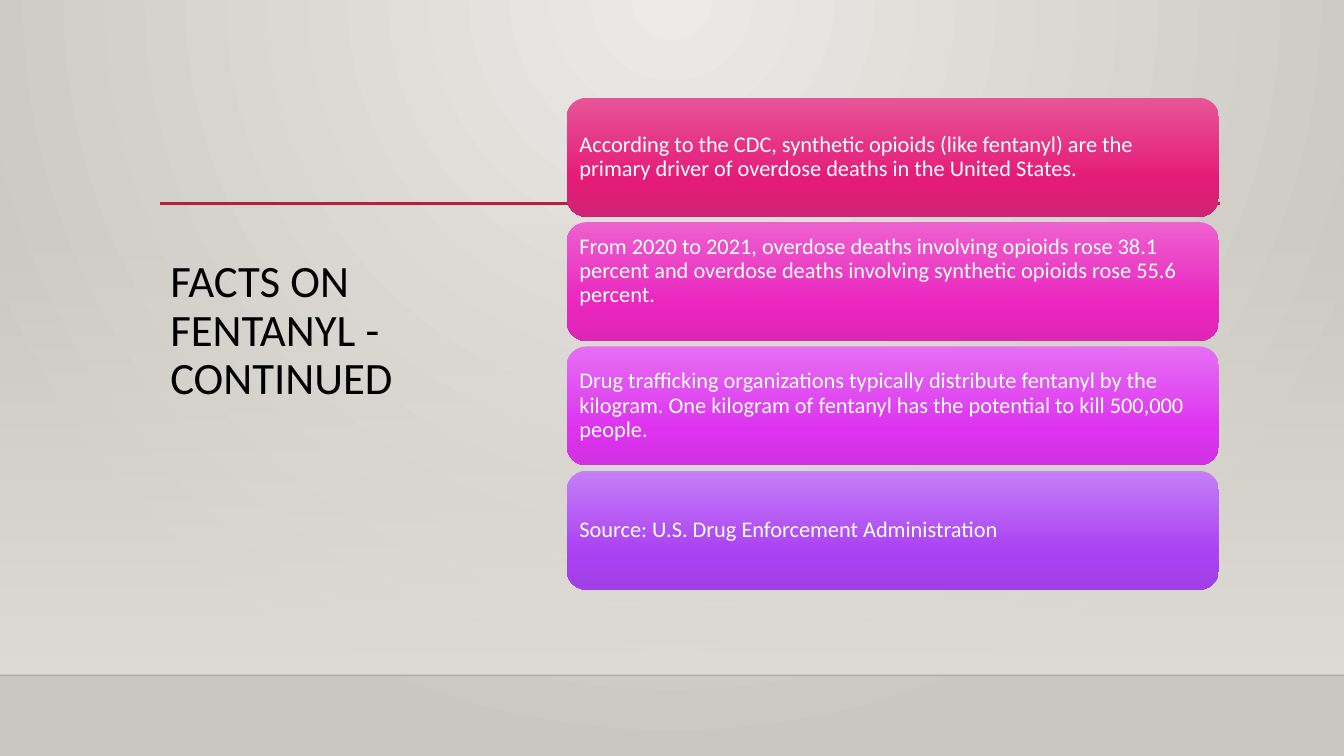
from lxml import etree
from pptx import Presentation
from pptx.dml.color import RGBColor
from pptx.enum import shapes, text
from pptx.oxml.ns import qn
from pptx.util import Inches, Pt

FONT = "Calibri"
COLORS = {"title": "000000", "card_text": "FFFFFF", "accent": "B71E42",
          "floor_line": "000001", "wall": "DFDBD5",
          "back_center": "ECEAE7", "back_edge": "CAC7C1"}

TITLE = "FACTS ON FENTANYL - CONTINUED"
# Text, vertical anchor, gradient colours from top to bottom
CARDS = [
    ("According to the CDC, synthetic opioids (like fentanyl) are the primary "
     "driver of overdose deaths in the United States.",
     "MIDDLE", ("E75597", "E51A79", "CF2374")),
    ("From 2020 to 2021, overdose deaths involving opioids rose 38.1 percent and "
     "overdose deaths involving synthetic opioids rose 55.6 percent.",
     "TOP", ("ED61CE", "EB26C0", "DE25B6")),
    ("Drug trafficking organizations typically distribute fentanyl by the kilogram. "
     "One kilogram of fentanyl has the potential to kill 500,000 people.",
     "MIDDLE", ("E66FF3", "DD33F0", "D131E2")),
    ("Source: U.S. Drug Enforcement Administration",
     "MIDDLE", ("C57FF7", "AA41F3", "A13FE5")),
]
CARD_STOPS = (0, 69, 100)
CARD_LEFT, CARD_WIDTH, CARD_HEIGHT = 5.62, 6.47, 1.18
FIRST_TOP, LAST_TOP = 0.97, 4.67
SLIDE_WIDTH, SLIDE_HEIGHT = 13.33, 7.5
FLOOR_TOP = 6.7


def set_alpha(color_element, percent):
    etree.SubElement(color_element, qn("a:alpha"), val=str(percent * 1000))


def set_gradient(fill, element, stops, circle=None):
    """Stops are (position, colour, opacity); circle is the focus rectangle."""
    fill.gradient()
    gradient = element.find(".//" + qn("a:gradFill"))
    for child in list(gradient):
        gradient.remove(child)
    stop_list = etree.SubElement(gradient, qn("a:gsLst"))
    for position, color, opacity in stops:
        stop = etree.SubElement(stop_list, qn("a:gs"), pos=str(position * 1000))
        color_element = etree.SubElement(stop, qn("a:srgbClr"), val=color)
        if opacity < 100:
            set_alpha(color_element, opacity)
    if circle:
        focus = etree.SubElement(gradient, qn("a:path"), path="circle")
        etree.SubElement(focus, qn("a:fillToRect"),
                         **{side: str(value * 1000) for side, value in circle.items()})
    else:
        etree.SubElement(gradient, qn("a:lin"), ang="5400000", scaled="0")


def add_box(slide, kind, left, top, width, height, stops):
    shape = slide.shapes.add_shape(kind, Inches(left), Inches(top),
                                   Inches(width), Inches(height))
    shape.shadow.inherit = False
    shape.line.fill.background()
    set_gradient(shape.fill, shape.element, stops)
    return shape


def add_line(slide, left, right, top, color, width, opacity=100):
    line = slide.shapes.add_connector(shapes.MSO_CONNECTOR.STRAIGHT, Inches(left),
                                      Inches(top), Inches(right), Inches(top))
    line.line.color.rgb = RGBColor.from_string(color)
    line.line.width = Pt(width)
    properties = line.element.spPr
    if opacity < 100:
        set_alpha(properties.find(".//" + qn("a:srgbClr")), opacity)
    etree.SubElement(properties, qn("a:effectLst"))


def write(shape, words, size, color, anchor="TOP", margins=(0.1, 0.05)):
    frame = shape.text_frame
    frame.word_wrap = True
    frame.vertical_anchor = text.MSO_ANCHOR[anchor]
    frame.margin_left = frame.margin_right = Inches(margins[0])
    frame.margin_top = frame.margin_bottom = Inches(margins[1])
    paragraph = frame.paragraphs[0]
    paragraph.alignment = text.PP_ALIGN.LEFT
    paragraph.line_spacing = 0.9
    run = paragraph.add_run()
    run.text = words
    run.font.name = FONT
    run.font.size = Pt(size)
    run.font.color.rgb = RGBColor.from_string(color)


def main():
    presentation = Presentation()
    presentation.slide_width = Inches(SLIDE_WIDTH)
    presentation.slide_height = Inches(SLIDE_HEIGHT)
    slide = presentation.slides.add_slide(presentation.slide_layouts[6])

    # Background wall and floor
    set_gradient(slide.background.fill, slide.element,
                 [(0, COLORS["back_center"], 100), (100, COLORS["back_edge"], 100)],
                 circle={"l": 43, "t": 0, "r": 43, "b": 100})
    wall_top = 2.21
    add_box(slide, shapes.MSO_SHAPE.RECTANGLE, 0, wall_top, SLIDE_WIDTH,
            FLOOR_TOP - wall_top,
            [(0, COLORS["wall"], 0), (100, COLORS["wall"], 100)])
    add_line(slide, 0, SLIDE_WIDTH, FLOOR_TOP, COLORS["floor_line"], 1, opacity=20)

    # Title under the accent line
    add_line(slide, 1.59, 12.1, 2.02, COLORS["accent"], 2.5)
    title = slide.shapes.add_textbox(Inches(1.59), Inches(2.52),
                                     Inches(3.58), Inches(2.92))
    write(title, TITLE, 32, COLORS["title"])

    # Fact cards
    pitch = (LAST_TOP - FIRST_TOP) / (len(CARDS) - 1)
    for index, (fact, anchor, gradient) in enumerate(CARDS):
        stops = [(position, color, 100) for position, color in zip(CARD_STOPS, gradient)]
        card = add_box(slide, shapes.MSO_SHAPE.ROUNDED_RECTANGLE, CARD_LEFT,
                       FIRST_TOP + index * pitch, CARD_WIDTH, CARD_HEIGHT, stops)
        write(card, fact, 16, COLORS["card_text"], anchor, margins=(0.07, 0.07))

    presentation.save("out.pptx")


if __name__ == "__main__":
    main()
